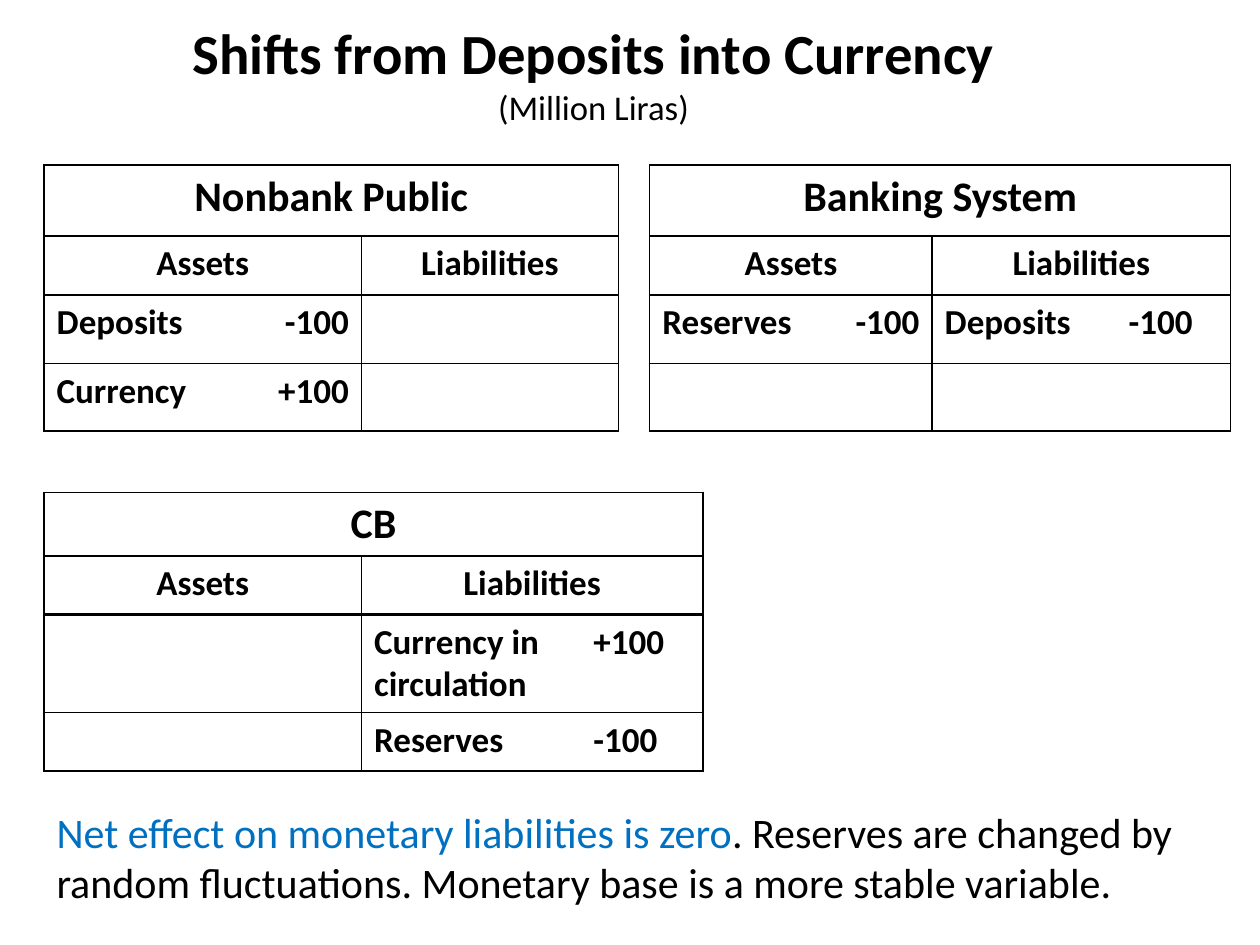
from lxml.etree import SubElement
from pptx import Presentation
from pptx.dml.color import RGBColor
from pptx.enum.text import MSO_ANCHOR as Anchor, PP_ALIGN as Align
from pptx.oxml.ns import qn
from pptx.util import Pt

BLACK, BLUE, WHITE = "000000", "0070C0", "FFFFFF"
LEFT = 25.2
THIN, LINE, HEAVY = 0.5, 1, 1.5
ACCOUNT_COLUMNS = 4


def color(hex_text):
    return RGBColor.from_string(hex_text)


def add_text(para, text, size=20, bold=False, fill=BLACK, align=Align.LEFT):
    para.alignment = align
    span = para.add_run()
    span.text = text
    span.font.name = "Calibri"
    span.font.size = Pt(size)
    span.font.bold = bold
    span.font.color.rgb = color(fill)


def add_box(page, left, top, width, height, anchor=Anchor.TOP):
    box = page.shapes.add_textbox(Pt(left), Pt(top), Pt(width), Pt(height))
    box.text_frame.word_wrap = True
    box.text_frame.vertical_anchor = anchor
    return box.text_frame


def style_cell(cell, left=0, right=0, top=0, bottom=0):
    """Give the cell a white fill and borders of these widths; 0 is none."""
    properties = cell._tc.get_or_add_tcPr()
    for side, width in zip("LRTB", (left, right, top, bottom)):
        line = SubElement(properties, qn(f"a:ln{side}"), w=str(Pt(width)))
        if width:
            fill = SubElement(line, qn("a:solidFill"))
            SubElement(fill, qn("a:srgbClr"), val=BLACK)
        else:
            SubElement(line, qn("a:noFill"))
    cell.fill.solid()
    cell.fill.fore_color.rgb = color(WHITE)


def add_table(page, top, widths, heights):
    frame = page.shapes.add_table(len(heights), len(widths), Pt(LEFT), Pt(top),
                                  Pt(sum(widths)), Pt(sum(heights)))
    table = frame.table
    table.first_row = table.horz_banding = False
    for column, width in zip(table.columns, widths):
        column.width = Pt(width)
    for row, height in zip(table.rows, heights):
        row.height = Pt(height)
    return table


def add_heading(table, row, first, last, text, size):
    cell = table.cell(row, first)
    cell.merge(table.cell(row, last))
    add_text(cell.text_frame.paragraphs[0], text, size, True, align=Align.CENTER)


def add_account(table, first, name, entries, edges=(LINE, LINE), top=LINE, bottom=LINE,
                asset_align=Align.RIGHT):
    """Fill four columns with a T-account; entries are rows of label and amount pairs."""
    last = first + ACCOUNT_COLUMNS - 1
    rules = [top, LINE, HEAVY, LINE, bottom]
    for row in range(len(table.rows)):
        for column in range(first, last + 1):
            opens = (column - first) % 2 == 0
            heading = row < 2
            left = edges[0] if column == first else LINE
            right = edges[1] if column == last or row == 0 else LINE
            style_cell(table.cell(row, column),
                       left if opens or heading else 0,
                       right if not opens or heading else 0,
                       rules[row], rules[row + 1])
    add_heading(table, 0, first, last, name, 24)
    add_heading(table, 1, first, first + 1, "Assets", 20)
    add_heading(table, 1, first + 2, last, "Liabilities", 20)
    aligns = (Align.LEFT, asset_align, Align.LEFT, Align.LEFT)
    for row, entry in enumerate(entries, start=2):
        for offset, (text, align) in enumerate(zip(entry, aligns)):
            if text:
                para = table.cell(row, first + offset).text_frame.paragraphs[0]
                add_text(para, text, bold=True, align=align)


def add_gap(table, column):
    for row in range(len(table.rows)):
        style_cell(table.cell(row, column), THIN, THIN)
    table.cell(0, column).merge(table.cell(2, column))


def main():
    deck = Presentation()
    deck.slide_width, deck.slide_height = Pt(720), Pt(540)
    page = deck.slides.add_slide(deck.slide_layouts[6])

    title = add_box(page, 42.5, 0, 593.3, 82.8, Anchor.MIDDLE)
    add_text(title.paragraphs[0], "Shifts from Deposits into Currency", 32.4, True,
             align=Align.CENTER)
    add_text(title.add_paragraph(), "(Million Liras)", 19.8, align=Align.CENTER)

    private = add_table(page, 94.3, [108, 73.4, 87.8, 59, 18, 95.8, 65.5, 105.1, 65.5],
                        [40.5, 33.7, 39.4, 38.5])
    add_account(private, 0, "Nonbank Public",
                [("Deposits", "-100", "", ""), ("Currency", "+100", "", "")],
                edges=(LINE, THIN), top=HEAVY)
    add_gap(private, ACCOUNT_COLUMNS)
    add_account(private, ACCOUNT_COLUMNS + 1, "Banking System",
                [("Reserves", "-100", "Deposits", "-100")],
                edges=(THIN, LINE), top=HEAVY)

    central = add_table(page, 281.3, [118.8, 62.6, 125.3, 69.8], [36.5, 33.3, 56.2, 33.3])
    add_account(central, 0, "CB",
                [("", "", "Currency in circulation", "+100"), ("", "", "Reserves", "-100")],
                bottom=HEAVY)

    summary = add_box(page, LEFT, 457.2, 663, 65.5).paragraphs[0]
    add_text(summary, "Net effect on monetary liabilities is zero", 24, fill=BLUE)
    add_text(summary, ". Reserves are changed by random fluctuations. "
             "Monetary base is a more stable variable.", 24)

    deck.save("out.pptx")


if __name__ == "__main__":
    main()
